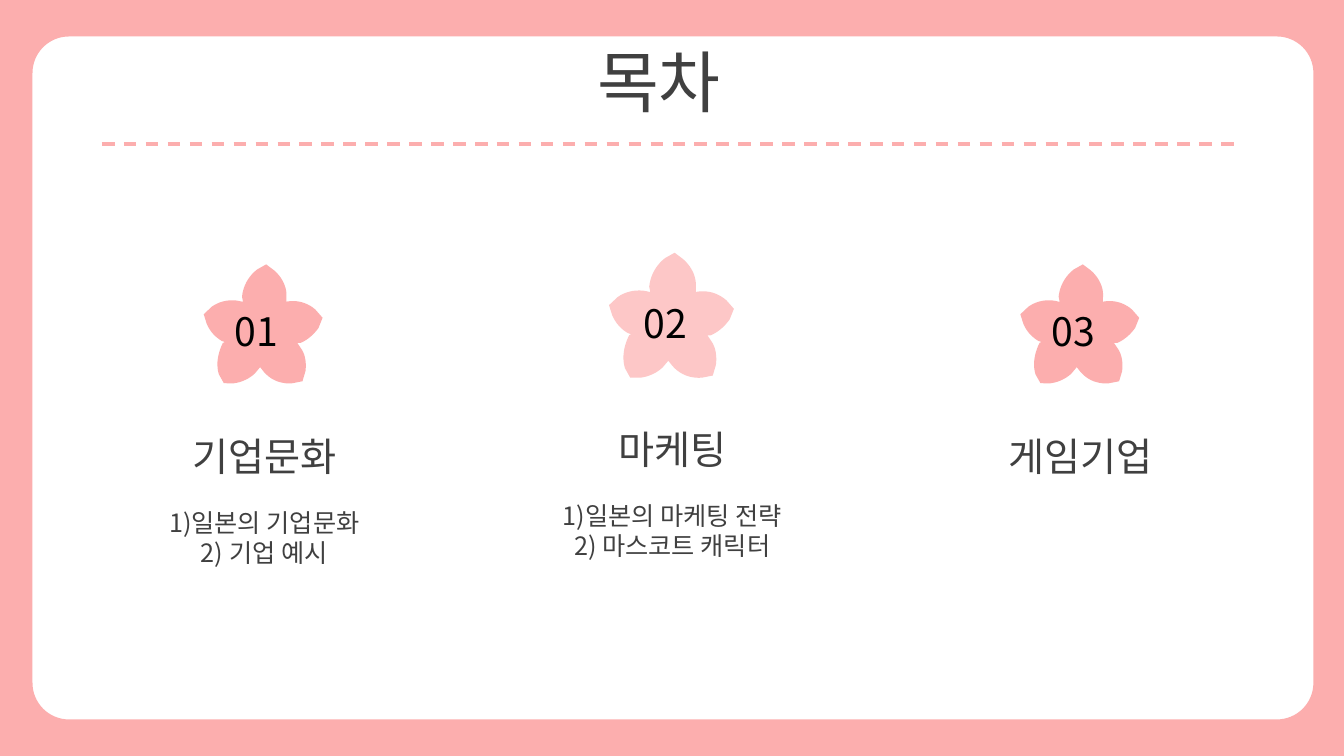
from math import cos, pi, radians, sin

from lxml import etree
from pptx import Presentation
from pptx.dml.color import RGBColor
from pptx.enum.dml import MSO_LINE
from pptx.enum.shapes import MSO_CONNECTOR
from pptx.enum.text import MSO_AUTO_SIZE, PP_ALIGN
from pptx.oxml.ns import qn
from pptx.util import Cm, Pt

DASH = MSO_LINE.DASH
STRAIGHT = MSO_CONNECTOR.STRAIGHT
FIT_TEXT = MSO_AUTO_SIZE.SHAPE_TO_FIT_TEXT
LEFT, CENTER = PP_ALIGN.LEFT, PP_ALIGN.CENTER

FONT = "Noto Sans CJK KR"
PINK, LIGHT_PINK = "FCAEAE", "FDC7C7"
GRAY, BLACK = "404040", "000000"
SLIDE_W, SLIDE_H = 33.87, 19.05
FLOWER_TILT = 324.6
FLOWER_UNITS = 117  # flower width in the units of PETAL_EDGES

# Each petal edge: a tip or notch, then a Bezier curve, around the flower centre
PETAL_EDGES = [
    ((2, -73), (10, -67), (18, -60), (23, -50), (22, -40)),
    ((22, -36), (22, -36), (33, -38), (43, -35), (51, -28)),
    ((58, -20), (54, -10), (49, -3), (43, 2), (36, 5)),
    ((33, 5), (37, 11), (41, 17), (42, 25), (41, 33)),
    ((38, 43), (28, 45), (17, 46), (7, 42), (0, 34)),
    ((-4, 29), (-9, 35), (-14, 40), (-22, 44), (-30, 45)),
    ((-40, 45), (-45, 36), (-48, 26), (-46, 15), (-41, 5)),
    ((-39, 4), (-42, 3), (-49, -1), (-54, -7), (-57, -14)),
    ((-60, -23.5), (-52, -31), (-44, -37), (-32, -39), (-22, -36)),
    ((-21, -36), (-22, -41), (-21, -51), (-16, -61), (-7, -68)),
]

# Flower centre x, centre y, width, colour; number box; topic box; texts
CHAPTERS = [
    ((6.64, 8.52, 2.97, PINK), "01", (5.66, 7.62), (3.23, 10.77, 4.45),
     ["기업문화", "1)일본의 기업문화", "2) 기업 예시"]),
    ((16.93, 8.32, 3.12, LIGHT_PINK), "02", (15.98, 7.42), (13.51, 10.59, 4.45),
     ["마케팅", "1)일본의 마케팅 전략", "2) 마스코트 캐릭터"]),
    ((27.22, 8.52, 2.97, PINK), "03", (26.26, 7.62), (23.8, 10.77, 1.45),
     ["게임기업"]),
]


def color(hex_code):
    return RGBColor.from_string(hex_code)


def bezier(start, control1, control2, end, steps=10):
    points = []
    for step in range(steps + 1):
        t = step / steps
        weights = ((1 - t) ** 3, 3 * t * (1 - t) ** 2, 3 * t * t * (1 - t), t ** 3)
        points.append(tuple(
            sum(w * v for w, v in zip(weights, axis))
            for axis in zip(start, control1, control2, end)))
    return points


def rounded_outline(left, top, right, bottom, radius, steps=16):
    corners = [(right - radius, bottom - radius), (left + radius, bottom - radius),
               (left + radius, top + radius), (right - radius, top + radius)]
    return [(x + radius * cos(angle), y + radius * sin(angle))
            for quarter, (x, y) in enumerate(corners)
            for angle in ((quarter + step / steps) * pi / 2 for step in range(steps + 1))]


def add_outline(slide, contours, fill):
    contours = [[(Cm(x), Cm(y)) for x, y in contour] for contour in contours]
    first, *others = contours
    builder = slide.shapes.build_freeform(*first[0])
    builder.add_line_segments(first[1:])
    for contour in others:
        builder.move_to(*contour[0])
        builder.add_line_segments(contour[1:])
    outline = builder.convert_to_shape()
    outline.shadow.inherit = False
    outline.fill.solid()
    outline.fill.fore_color.rgb = color(fill)
    outline.line.fill.background()
    return outline


def add_flower(slide, center_x, center_y, width, fill):
    # The outline is turned upright, then tilted by the shape's rotation
    turn = radians(-FLOWER_TILT)
    unit = width / FLOWER_UNITS
    points = [point for corner, *curve in PETAL_EDGES
              for point in [corner, *bezier(*curve)]]
    upright = [(center_x + unit * (x * cos(turn) - y * sin(turn)),
                center_y + unit * (x * sin(turn) + y * cos(turn))) for x, y in points]
    add_outline(slide, [upright], fill).rotation = FLOWER_TILT


def add_text(slide, left, top, width, height, lines, sizes, hex_code, align=LEFT):
    box = slide.shapes.add_textbox(Cm(left), Cm(top), Cm(width), Cm(height))
    frame = box.text_frame
    frame.word_wrap = True
    frame.auto_size = FIT_TEXT
    frame.text = "\n".join(lines)
    for paragraph, size in zip(frame.paragraphs, sizes):
        paragraph.alignment = align
        font = paragraph.runs[0].font
        font.size = Pt(size)
        font.name = FONT
        font.color.rgb = color(hex_code)
        east_asian = etree.SubElement(paragraph.runs[0].font._element, qn("a:ea"))
        east_asian.set("typeface", FONT)
    return frame


def add_dashed_line(slide, left, right, y):
    divider = slide.shapes.add_connector(STRAIGHT, Cm(left), Cm(y), Cm(right), Cm(y))
    divider.line.color.rgb = color(PINK)
    divider.line.width = Pt(2.25)
    divider.line.dash_style = DASH
    etree.SubElement(divider._element.spPr, qn("a:effectLst"))


def main():
    prs = Presentation()
    prs.slide_width, prs.slide_height = Cm(SLIDE_W), Cm(SLIDE_H)
    slide = prs.slides.add_slide(prs.slide_layouts[6])

    # Pink frame around the rounded page
    page_edge = [(0, 0), (SLIDE_W, 0), (SLIDE_W, SLIDE_H), (0, SLIDE_H)]
    window = rounded_outline(0.82, 0.92, 33.1, 18.13, 0.92)
    add_outline(slide, [page_edge, window], PINK)

    # Title and divider
    add_text(slide, 14.8, 0.89, 4.25, 2.31, ["목차"], [48], GRAY)
    add_dashed_line(slide, 2.57, 31.3, 3.63)

    # Chapters
    for flower, number, number_at, topic_box, lines in CHAPTERS:
        add_flower(slide, *flower)
        add_text(slide, *number_at, 1.93, 1.45, [number], [28], BLACK)
        left, top, height = topic_box
        topic = add_text(slide, left, top, 6.86, height, lines, [28, 18, 18], GRAY, CENTER)
        for first_item in topic.paragraphs[1:2]:
            first_item.space_before = Pt(20)

    prs.save("out.pptx")


if __name__ == "__main__":
    main()
